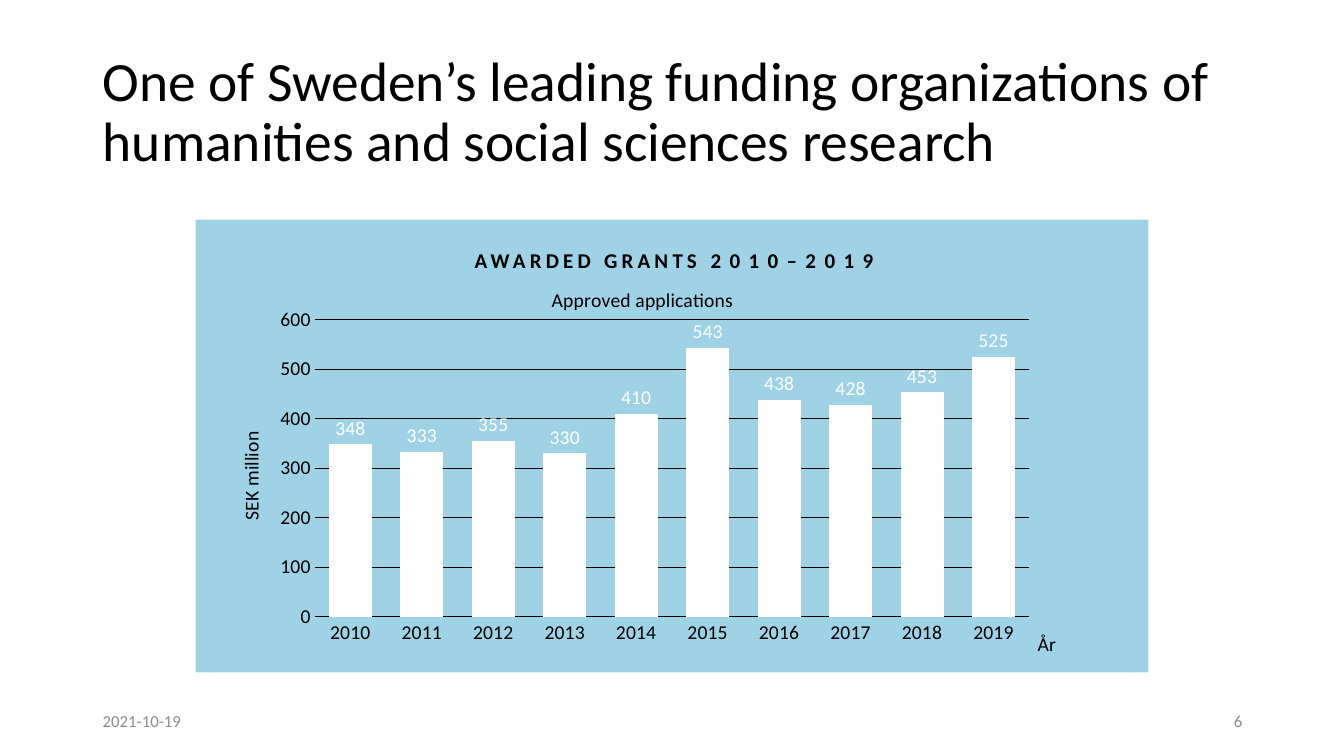
from lxml.etree import SubElement
from pptx import Presentation
from pptx.chart.data import CategoryChartData
from pptx.dml.color import RGBColor
from pptx.enum.chart import XL_CHART_TYPE, XL_LABEL_POSITION, XL_TICK_MARK
from pptx.enum.text import MSO_ANCHOR, MSO_AUTO_SIZE, PP_ALIGN
from pptx.oxml import parse_xml
from pptx.oxml.ns import nsdecls, qn
from pptx.util import Inches, Pt

FONT = "Calibri"
BLACK, WHITE, GREY, PANEL = "000000", "FFFFFF", "8C8C8C", "A0D2E6"

TITLE = "One of Sweden’s leading funding organizations of humanities and social sciences research"
HEADING = [("AWARDED GRANTS ", 3), ("2010–2019", 6)]
GRANTS = [348, 333, 355, 330, 410, 543, 438, 428, 453, 525]
YEARS = [str(2010 + i) for i in range(len(GRANTS))]
CHART_BOX = (1.94, 2.18, 9.45, 4.49)
FOOTERS = [
    ("2021-10-19", 0.92, PP_ALIGN.LEFT),
    ("6", 9.42, PP_ALIGN.RIGHT),
]


def rgb(value):
    return RGBColor.from_string(value)


def style(font, size=14, color=BLACK, bold=False):
    font.name = FONT
    font.size = Pt(size)
    font.bold = bold
    font.color.rgb = rgb(color)


def add_text(tf, runs, align=PP_ALIGN.LEFT, line_spacing=None, insets=None, **fmt):
    tf.word_wrap = True
    tf.auto_size = MSO_AUTO_SIZE.NONE
    tf.vertical_anchor = MSO_ANCHOR.MIDDLE
    if insets:
        tf.margin_left, tf.margin_top, tf.margin_right, tf.margin_bottom = map(Inches, insets)
    p = tf.paragraphs[0]
    p.alignment = align
    p.line_spacing = line_spacing
    for text, spacing in runs:
        r = p.add_run()
        r.text = text
        style(r.font, **fmt)
        if spacing:
            r._r.get_or_add_rPr().set("spc", str(spacing * 100))


def set_layout(parent, index, **values):
    for old in parent.findall(qn("c:layout")):
        parent.remove(old)
    layout = parse_xml(f"<c:layout {nsdecls('c')}/>")
    manual = SubElement(layout, qn("c:manualLayout"))
    for tag, value in values.items():
        SubElement(manual, qn(f"c:{tag}")).set("val", str(value))
    parent.insert(index, layout)


def add_chart_title(owner, title, text, x, y):
    owner.has_title = True
    p = title().text_frame.paragraphs[0]
    r = p.add_run()
    r.text = text
    style(r.font)
    set_layout(title()._element, 1, xMode="edge", yMode="edge", x=x, y=y)


def style_axis(axis):
    style(axis.tick_labels.font)
    axis.major_tick_mark = XL_TICK_MARK.NONE
    axis.minor_tick_mark = XL_TICK_MARK.NONE


def style_line(line):
    line.color.rgb = rgb(BLACK)
    line.width = Pt(0.75)


def add_grants_chart(s):
    data = CategoryChartData()
    data.categories = YEARS
    data.add_series("Series 1", GRANTS)
    frame = s.shapes.add_chart(XL_CHART_TYPE.COLUMN_CLUSTERED, *map(Inches, CHART_BOX), data)
    chart = frame.chart
    chart.has_legend = False
    style(chart.font)

    cat, val = chart.category_axis, chart.value_axis
    style_axis(cat)
    style_axis(val)
    style_line(cat.format.line)
    val.format.line.fill.background()
    val.has_major_gridlines = True
    style_line(val.major_gridlines.format.line)
    val.minimum_scale, val.maximum_scale, val.major_unit = 0, 600, 100

    add_chart_title(chart, lambda: chart.chart_title, "Approved applications", 0.37, 0.14)
    add_chart_title(cat, lambda: cat.axis_title, "År", 0.88, 0.9)
    add_chart_title(val, lambda: val.axis_title, "SEK million", 0.04, 0.46)

    plot = chart.plots[0]
    plot.gap_width = 66
    plot.vary_by_categories = False
    fill = plot.series[0].format.fill
    fill.solid()
    fill.fore_color.rgb = rgb(WHITE)
    plot.has_data_labels = True
    labels = plot.data_labels
    labels.show_value = True
    labels.position = XL_LABEL_POSITION.OUTSIDE_END
    style(labels.font, color=WHITE)

    space = chart._chartSpace
    set_layout(space.chart.plotArea, 0, layoutTarget="inner", xMode="edge", yMode="edge",
               x=0.125, y=0.221, w=0.75, h=0.656)
    space.chart.addnext(parse_xml(
        f'<c:spPr {nsdecls("c", "a")}><a:solidFill><a:srgbClr val="{PANEL}"/></a:solidFill>'
        '<a:ln><a:noFill/></a:ln></c:spPr>'))


def add_box(s, box, runs, **fmt):
    sp = s.shapes.add_textbox(*map(Inches, box))
    add_text(sp.text_frame, runs, **fmt)


def main():
    prs = Presentation()
    prs.slide_width, prs.slide_height = Inches(13.33), Inches(7.5)
    s = prs.slides.add_slide(prs.slide_layouts[5])

    title = s.shapes.title
    title.left, title.top, title.width, title.height = map(Inches, (0.92, 0.4, 11.5, 1.45))
    add_text(title.text_frame, [(TITLE, 0)], line_spacing=0.9, size=39.6)

    add_grants_chart(s)
    add_box(s, (3.12, 2.17, 7.09, 0.59), HEADING, align=PP_ALIGN.CENTER,
            insets=(0.04, 0.24, 0, 0), size=15, bold=True)
    for text, left, align in FOOTERS:
        add_box(s, (left, 6.95, 3, 0.4), [(text, 0)], align=align, size=12, color=GREY)

    prs.save("out.pptx")


if __name__ == "__main__":
    main()
